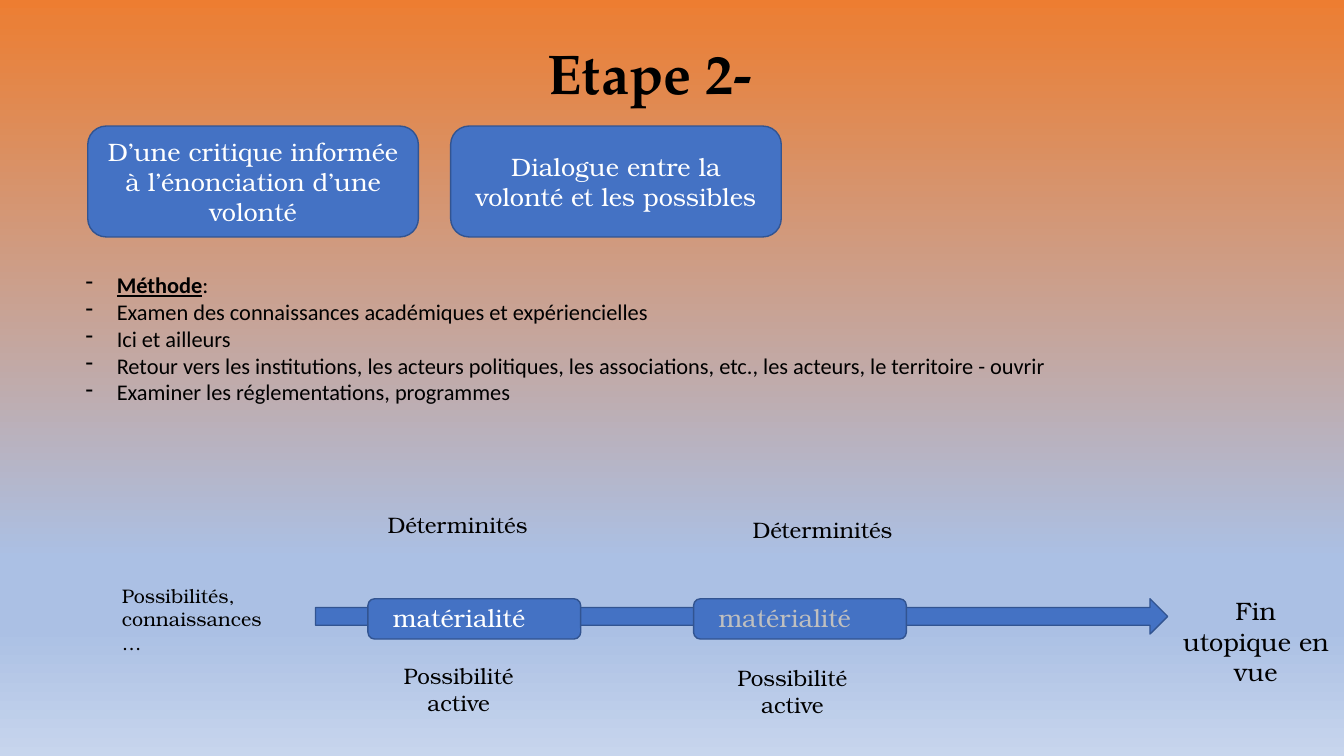
from copy import deepcopy

from lxml.etree import SubElement
from pptx import Presentation
from pptx.dml.color import RGBColor
from pptx.enum.shapes import MSO_SHAPE
from pptx.enum.text import MSO_ANCHOR, MSO_AUTO_SIZE, PP_ALIGN
from pptx.oxml.ns import qn
from pptx.util import Inches, Pt

BLACK = RGBColor(0x00, 0x00, 0x00)
WHITE = RGBColor(0xFF, 0xFF, 0xFF)
GREY = RGBColor(0xBF, 0xBF, 0xBF)
BLUE = RGBColor(0x44, 0x72, 0xC4)
DARK_BLUE = RGBColor(0x32, 0x54, 0x91)
SKY_STOPS = [
    (0, RGBColor(0xED, 0x7D, 0x31)),
    (0.03, RGBColor(0xEA, 0x80, 0x38)),
    (0.74, RGBColor(0xAB, 0xC0, 0xE4)),
    (0.83, RGBColor(0xAB, 0xC0, 0xE4)),
    (1, RGBColor(0xC7, 0xD5, 0xED)),
]

TITLE = {"name": "TeX Gyre Pagella", "size": Pt(40), "bold": True}
LIST = {"name": "Calibri", "size": Pt(16)}
LIST_HEADING = {**LIST, "bold": True, "underline": True}
LARGE = {"name": "TeX Gyre Bonum", "size": Pt(18)}
MEDIUM = {**LARGE, "size": Pt(16)}
SMALL = {**LARGE, "size": Pt(14)}

METHOD = [
    [("Méthode", LIST_HEADING), (":", LIST)],
    [("Examen des connaissances académiques et expériencielles", LIST)],
    [("Ici et ailleurs", LIST)],
    [("Retour vers les institutions, les acteurs politiques, les associations, "
      "etc., les acteurs, le territoire - ouvrir", LIST)],
    [("Examiner les réglementations, programmes", LIST)],
]
CARDS = [
    "D’une critique informée à l’énonciation d’une volonté",
    "Dialogue entre la volonté et les possibles",
]
# Per stage: text colour, place of the label above, place of the label below
STAGES = [
    (WHITE, (22.2, 66.93), (27.9, 86.93)),
    (GREY, (49.35, 67.6), (52.73, 87.2)),
]


class SlideBuilder:
    """Adds elements to one slide; every box is in percent of the slide's size."""

    def __init__(self, presentation):
        self.width = presentation.slide_width
        self.height = presentation.slide_height
        self.slide = presentation.slides.add_slide(presentation.slide_layouts[6])

    def place(self, left, top, width, height):
        return (int(self.width * left / 100), int(self.height * top / 100),
                int(self.width * width / 100), int(self.height * height / 100))

    def background(self, stops):
        fill = self.slide.background.fill
        fill.gradient()
        fill.gradient_angle = 270
        stop_list = self.slide.element.find(".//" + qn("a:gsLst"))
        for _ in range(len(stops) - len(fill.gradient_stops)):
            stop_list.append(deepcopy(stop_list[0]))
        for stop, (position, color) in zip(fill.gradient_stops, stops):
            stop.position = position
            stop.color.rgb = color

    def add_text_run(self, paragraph, text, style, color):
        run = paragraph.add_run()
        run.text = text
        for attribute, value in style.items():
            setattr(run.font, attribute, value)
        run.font.color.rgb = color

    def text_frame(self, box):
        frame = self.slide.shapes.add_textbox(*self.place(*box)).text_frame
        frame.word_wrap = True
        frame.auto_size = MSO_AUTO_SIZE.SHAPE_TO_FIT_TEXT
        return frame

    def text(self, box, text, style, color=BLACK, alignment=PP_ALIGN.CENTER):
        paragraph = self.text_frame(box).paragraphs[0]
        paragraph.alignment = alignment
        self.add_text_run(paragraph, text, style, color)

    def dash_list(self, box, items):
        frame = self.text_frame(box)
        for index, runs in enumerate(items):
            paragraph = frame.add_paragraph() if index else frame.paragraphs[0]
            properties = paragraph._p.get_or_add_pPr()
            indent = Inches(0.31)
            properties.set("marL", str(indent))
            properties.set("indent", str(-indent))
            SubElement(properties, qn("a:buChar")).set("char", "-")
            for text, style in runs:
                self.add_text_run(paragraph, text, style, BLACK)

    def shape(self, kind, box, text=""):
        shape = self.slide.shapes.add_shape(kind, *self.place(*box))
        shape.shadow.inherit = False
        shape.fill.solid()
        shape.fill.fore_color.rgb = BLUE
        shape.line.color.rgb = DARK_BLUE
        shape.line.width = Pt(1)
        if text:
            frame = shape.text_frame
            frame.word_wrap = True
            frame.vertical_anchor = MSO_ANCHOR.MIDDLE
            frame.paragraphs[0].alignment = PP_ALIGN.CENTER
            self.add_text_run(frame.paragraphs[0], text, LARGE, WHITE)


def main():
    presentation = Presentation()
    presentation.slide_width = Inches(13.33)
    presentation.slide_height = Inches(7.5)

    builder = SlideBuilder(presentation)
    builder.background(SKY_STOPS)
    builder.text((2.4, 4.4, 91.9, 10.27), "Etape 2-", TITLE)
    for index, card in enumerate(CARDS):
        builder.shape(MSO_SHAPE.ROUNDED_RECTANGLE,
                      (6.53 + 27 * index, 16.67, 24.6, 14.67), card)
    builder.dash_list((5.63, 35.2, 91.9, 22.93), METHOD)

    builder.shape(MSO_SHAPE.RIGHT_ARROW, (23.48, 79.2, 63.4, 4.67))
    for index, (color, above, below) in enumerate(STAGES):
        offset = 24.23 * index
        builder.shape(MSO_SHAPE.ROUNDED_RECTANGLE,
                      (27.38 + offset, 79.2, 15.83, 5.33))
        builder.text((28.5 + offset, 79.07, 14.03, 5.33), "matérialité",
                     LARGE, color, PP_ALIGN.LEFT)
        builder.text((*above, 23.7, 4.93), "Déterminités", MEDIUM)
        builder.text((*below, 12.45, 8.53), "Possibilité active", MEDIUM)
    builder.text((8.33, 76.53, 12.53, 10.8), "Possibilités, connaissances…",
                 SMALL, alignment=PP_ALIGN.LEFT)
    builder.text((86.87, 78.13, 13.13, 9.47), "Fin utopique en vue", LARGE)

    presentation.save("out.pptx")


if __name__ == "__main__":
    main()
